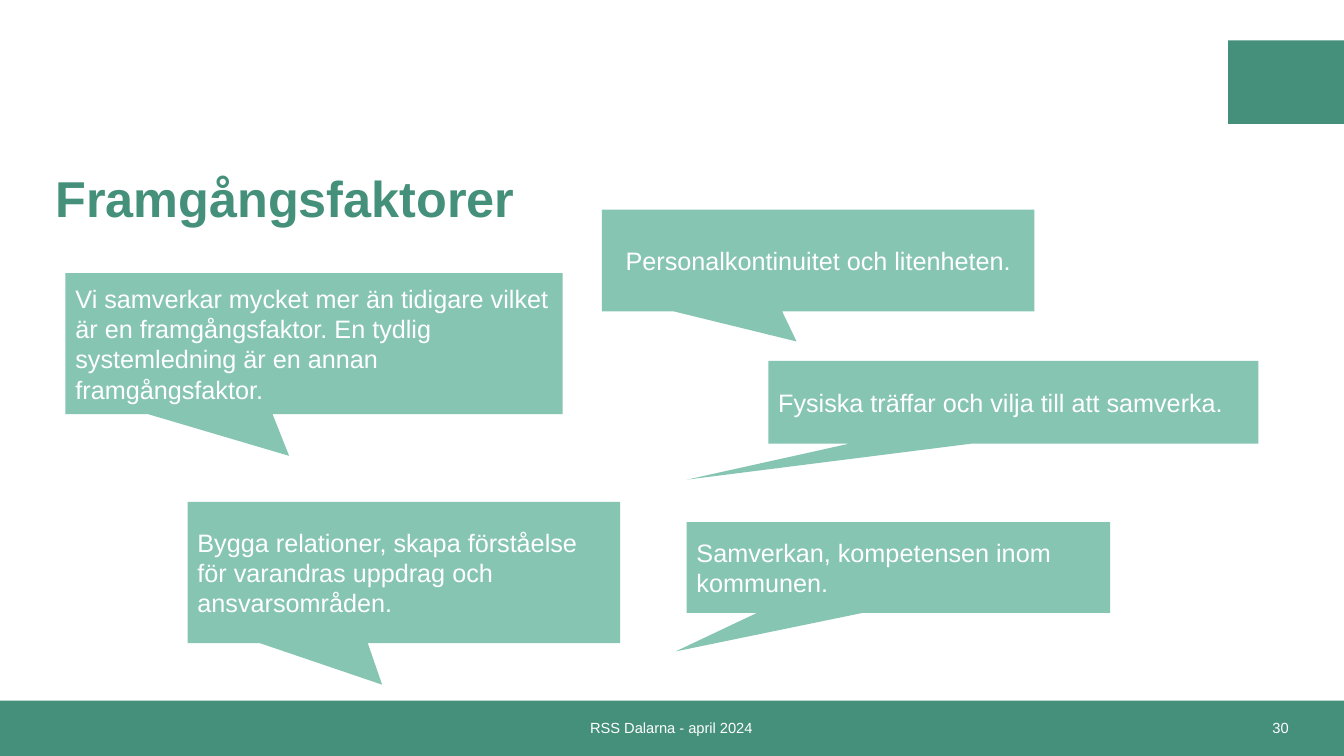
import pptx
import pptx.util
import pptx.dml.color
import pptx.enum.shapes
import pptx.enum.text

Inches = pptx.util.Inches
SHAPES = pptx.enum.shapes.MSO_SHAPE
ALIGN = pptx.enum.text.PP_ALIGN

COLORS = {"green": "45907A", "mint": "87C5B3", "white": "FFFFFF"}


class SlideBuilder:
    """Holds the style and the current slide."""

    font_name = "Arial"

    def __init__(self, page):
        self.page = page

    def color(self, name):
        return pptx.dml.color.RGBColor.from_string(COLORS[name])

    def set_text(self, shape, text, size, color, align, bold=False):
        frame = shape.text_frame
        frame.word_wrap = True
        frame.vertical_anchor = pptx.enum.text.MSO_ANCHOR.MIDDLE
        frame.text = text
        para = frame.paragraphs[0]
        para.alignment = align
        font = para.runs[0].font
        font.name = self.font_name
        font.size = pptx.util.Pt(size)
        font.bold = bold
        font.color.rgb = self.color(color)
        return para

    def block(self, kind, area, color):
        shape = self.page.shapes.add_shape(kind, *map(Inches, area))
        shape.shadow.inherit = False
        shape.fill.solid()
        shape.fill.fore_color.rgb = self.color(color)
        shape.line.fill.background()
        return shape

    def label(self, area, text, size, color, align, bold=False):
        box = self.page.shapes.add_textbox(*map(Inches, area))
        return self.set_text(box, text, size, color, align, bold)

    def callout(self, area, tip, text, align=ALIGN.LEFT):
        shape = self.block(SHAPES.RECTANGULAR_CALLOUT, area, "mint")
        for index, offset in enumerate(tip):
            shape.adjustments[index] = offset
        self.set_text(shape, text, 18, "white", align)


def main():
    deck = pptx.Presentation()
    deck.slide_width = Inches(13.33)
    deck.slide_height = Inches(7.5)
    builder = SlideBuilder(deck.slides.add_slide(deck.slide_layouts[6]))

    # Footer band and corner block
    builder.block(SHAPES.RECTANGLE, (0, 6.95, 13.33, 0.55), "green")
    builder.block(SHAPES.RECTANGLE, (12.18, 0.4, 1.15, 0.83), "green")
    builder.label((3.91, 6.95, 5.5, 0.54), "RSS Dalarna - april 2024",
                  10.5, "white", ALIGN.CENTER)
    builder.label((9.88, 6.95, 3, 0.54), "30", 10.5, "white", ALIGN.RIGHT)

    # Title
    title = builder.label((0.45, 1.34, 11.39, 1.32), "Framgångsfaktorer",
                          36, "green", ALIGN.LEFT, bold=True)
    title.line_spacing = 0.9

    # Speech callouts
    tip_below = (-0.05, 0.795)
    builder.callout((0.65, 2.71, 4.93, 1.4), tip_below,
                    "Vi samverkar mycket mer än tidigare vilket är en "
                    "framgångsfaktor. En tydlig systemledning är en annan "
                    "framgångsfaktor.")
    builder.callout((6.81, 5.18, 4.2, 0.9), (-0.526, 0.926),
                    "Samverkan, kompetensen inom kommunen.")
    builder.callout((5.97, 2.08, 4.29, 1.01), tip_below,
                    "Personalkontinuitet och litenheten.", ALIGN.CENTER)
    builder.callout((7.62, 3.58, 4.86, 0.82), (-0.665, 0.936),
                    "Fysiska träffar och vilja till att samverka.")
    builder.callout((1.86, 4.98, 4.29, 1.4), tip_below,
                    "Bygga relationer, skapa förståelse för varandras "
                    "uppdrag och ansvarsområden.")

    deck.save("out.pptx")


if __name__ == "__main__":
    main()
